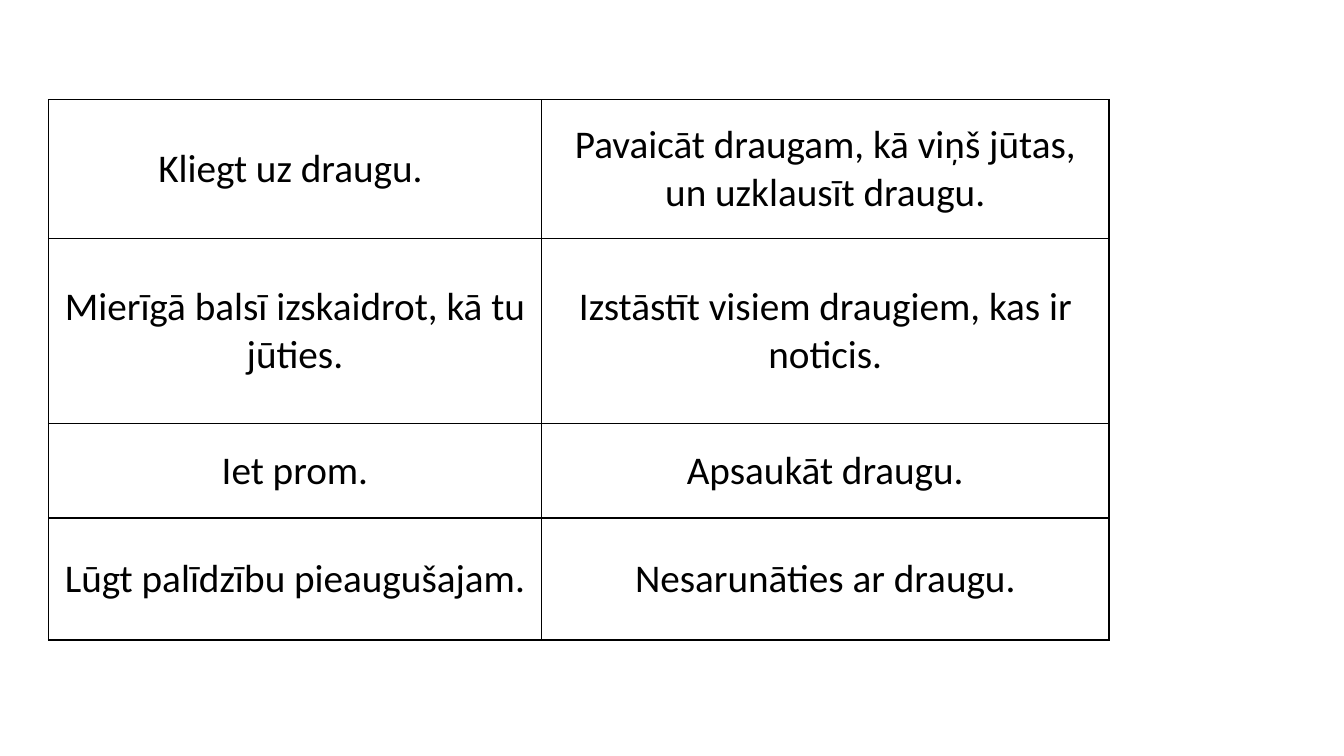
"""Build a slide with a table of ways to react to a friend."""
from lxml.etree import SubElement
from pptx import Presentation
from pptx.dml.color import RGBColor
from pptx.enum.text import MSO_ANCHOR, PP_ALIGN
from pptx.oxml.ns import qn
from pptx.util import Inches, Pt

REACTIONS = [
    ("Kliegt uz draugu. ", "Pavaicāt draugam, kā viņš jūtas, un uzklausīt draugu."),
    ("Mierīgā balsī izskaidrot, kā tu jūties.", "Izstāstīt visiem draugiem, kas ir noticis."),
    ("Iet prom.", "Apsaukāt draugu."),
    ("Lūgt palīdzību pieaugušajam.", "Nesarunāties ar draugu."),
]
COLUMN_WIDTHS = [4.89, 5.63]
ROW_HEIGHTS = [1.38, 1.83, 0.94, 1.21]
LEFT, TOP = 0.48, 0.99
BLACK = RGBColor(0x00, 0x00, 0x00)
WHITE = RGBColor(0xFF, 0xFF, 0xFF)


def add_borders(cell):
    properties = cell._tc.get_or_add_tcPr()
    for index, side in enumerate(("a:lnL", "a:lnR", "a:lnT", "a:lnB")):
        line = SubElement(properties, qn(side), w=str(Pt(1)))
        fill = SubElement(line, qn("a:solidFill"))
        SubElement(fill, qn("a:srgbClr"), val=str(BLACK))
        properties.insert(index, line)


def fill_cell(cell, text):
    cell.fill.solid()
    cell.fill.fore_color.rgb = WHITE
    cell.vertical_anchor = MSO_ANCHOR.MIDDLE
    add_borders(cell)
    para = cell.text_frame.paragraphs[0]
    para.alignment = PP_ALIGN.CENTER
    span = para.add_run()
    span.text = text
    span.font.name = "Calibri"
    span.font.size = Pt(28)
    span.font.bold = False
    span.font.color.rgb = BLACK


def main():
    deck = Presentation()
    deck.slide_width, deck.slide_height = Inches(13.33), Inches(7.5)
    page = deck.slides.add_slide(deck.slide_layouts[6])
    table = page.shapes.add_table(
        len(ROW_HEIGHTS), len(COLUMN_WIDTHS), Inches(LEFT), Inches(TOP),
        Inches(sum(COLUMN_WIDTHS)), Inches(sum(ROW_HEIGHTS)),
    ).table
    table.first_row = False
    table.horz_banding = False
    for column, width in zip(table.columns, COLUMN_WIDTHS):
        column.width = Inches(width)
    for row, height, texts in zip(table.rows, ROW_HEIGHTS, REACTIONS):
        row.height = Inches(height)
        for cell, text in zip(row.cells, texts):
            fill_cell(cell, text)
    deck.save("out.pptx")


if __name__ == "__main__":
    main()
